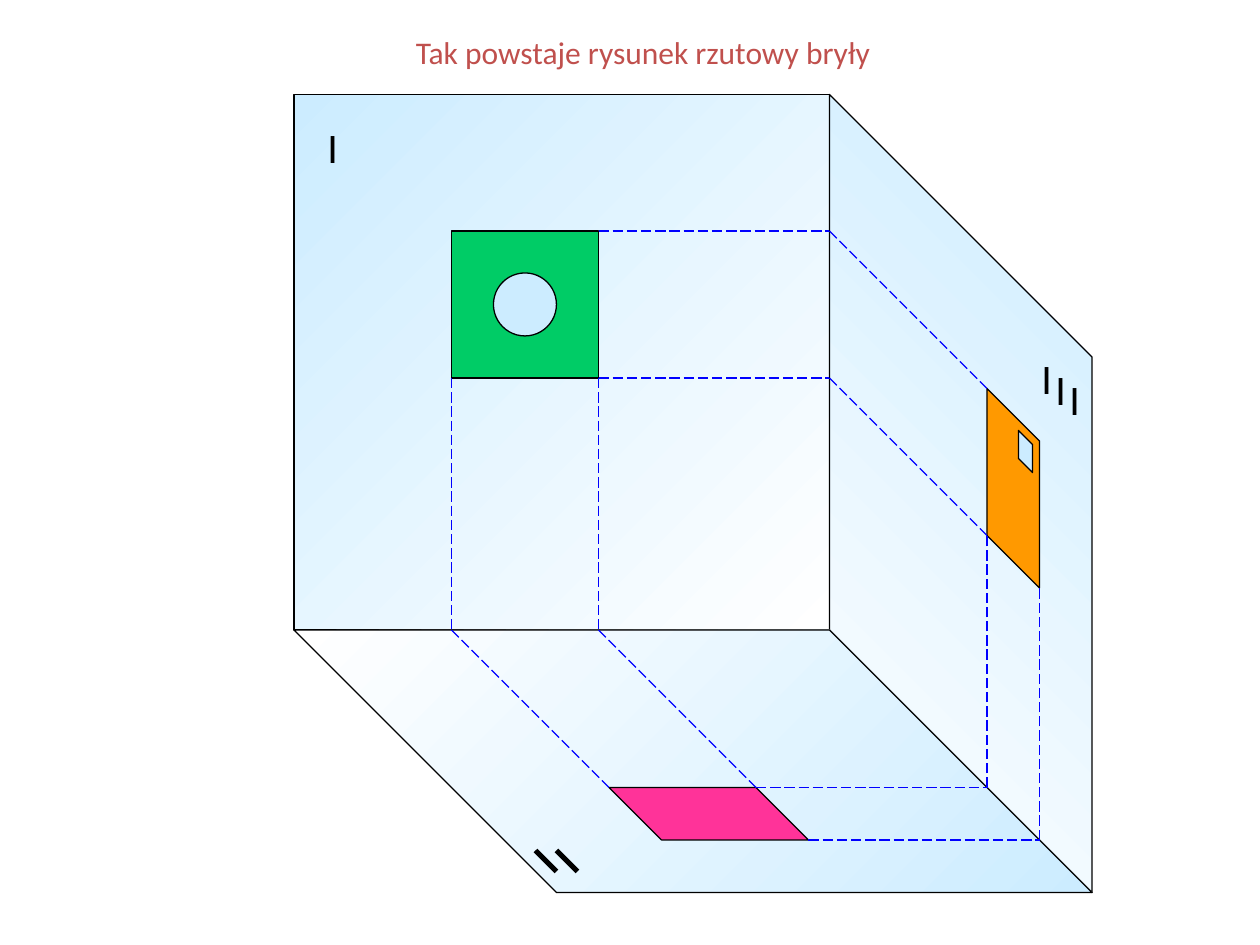
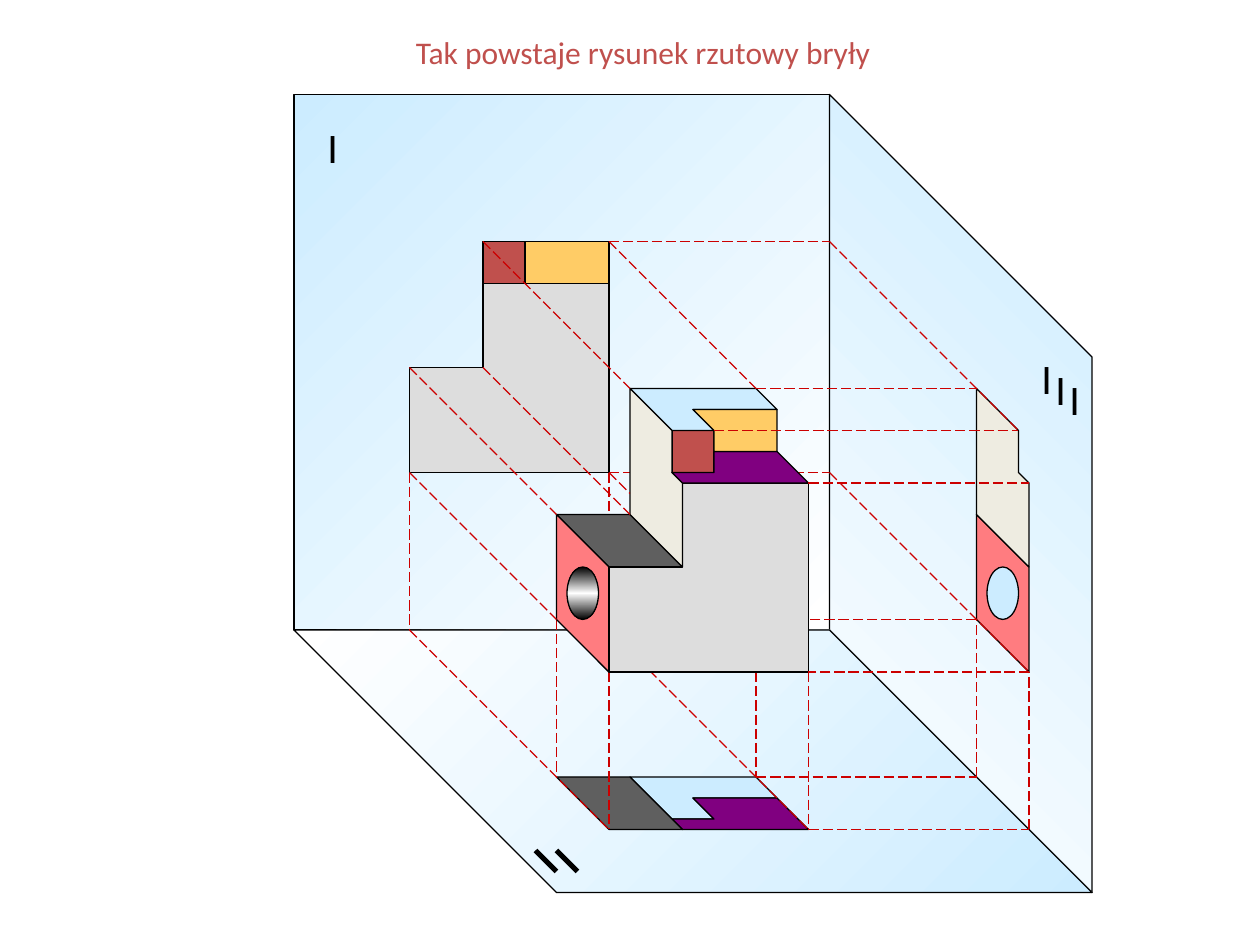
from dataclasses import dataclass

from lxml import etree
from pptx import Presentation
from pptx.dml.color import RGBColor
from pptx.enum.dml import MSO_LINE
from pptx.enum.shapes import MSO_CONNECTOR, MSO_SHAPE
from pptx.enum.text import MSO_ANCHOR, MSO_AUTO_SIZE, PP_ALIGN
from pptx.oxml.ns import qn
from pptx.util import Inches, Pt

RECT, OVAL = MSO_SHAPE.RECTANGLE, MSO_SHAPE.OVAL
STRAIGHT, DASH = MSO_CONNECTOR.STRAIGHT, MSO_LINE.LONG_DASH
MIDDLE, LEFT, NO_FIT = MSO_ANCHOR.MIDDLE, PP_ALIGN.LEFT, MSO_AUTO_SIZE.NONE

TITLE = "Tak powstaje rysunek rzutowy bryły"
TITLE_ONLY = 5


@dataclass(frozen=True)
class Theme:
    font: str = "Calibri"
    title_size: int = 18
    label_size: int = 24
    thin: float = 0.75
    thick: float = 3
    black: str = "000000"
    white: str = "FFFFFF"
    sky: str = "CCECFF"
    brick: str = "C0504D"
    green: str = "00CC66"
    pink: str = "FF3399"
    orange: str = "FF9900"
    blue: str = "0000FF"
    red: str = "CC0000"
    gray: str = "DDDDDD"
    dark: str = "5F5F5F"
    sand: str = "FFCC66"
    purple: str = "800080"
    rose: str = "FF7C80"
    cream: str = "EEECE1"


T = Theme()

# Faces of the stepped solid, on the drawing grid
FRONT = [(77, 46), (65, 46), (65, 54), (58, 54), (58, 64), (77, 64)]
TOP = [(60, 37), (72, 37), (74, 39), (66, 39), (68, 41), (64, 41)]
STEP = [(53, 49), (60, 49), (65, 54), (58, 54)]
LOW_SIDE = [(53, 49), (58, 54), (58, 64), (53, 59)]
HIGH_SIDE = [(60, 37), (64, 41), (64, 45), (65, 46), (65, 54), (60, 49)]
LEDGE = [(74, 43), (68, 43), (68, 45), (64, 45), (65, 46), (77, 46)]
LEDGE_PLAN = [(66, 76), (74, 76), (77, 79), (65, 79), (64, 78), (68, 78)]
NOTCH = [(74, 39), (74, 43), (68, 43), (68, 41), (66, 39)]


def grid(n):
    """The drawing lies on a grid of twelfths of an inch."""
    return Inches(n / 12)


def apply(target, values):
    for name, value in values.items():
        setattr(target, name, value)


class Drawing:
    def __init__(self, prs, theme):
        self.prs, self.t, self.s = prs, theme, None

    def new_slide(self, title):
        self.s = self.prs.slides.add_slide(self.prs.slide_layouts[TITLE_ONLY])
        sp = self.s.shapes.title
        apply(sp, {"left": Inches(3.2), "top": Inches(0.23),
                   "width": Inches(4.01), "height": Inches(0.37)})
        self.set_text(sp.text_frame, title, self.t.title_size, self.t.brick)
        apply(sp.text_frame, {"vertical_anchor": MIDDLE})

    def set_text(self, tf, text, size, color):
        apply(tf, {"word_wrap": True, "auto_size": NO_FIT})
        p = tf.paragraphs[0]
        p.alignment = LEFT
        r = p.add_run()
        r.text = text
        apply(r.font, {"name": self.t.font, "size": Pt(size), "bold": False})
        r.font.color.rgb = RGBColor.from_string(color)

    def label(self, x, y, text="I"):
        tb = self.s.shapes.add_textbox(grid(x), grid(y), grid(3), grid(6))
        self.set_text(tb.text_frame, text, self.t.label_size, self.t.black)

    def paint(self, sp, fill):
        """Fill is one colour, or an angle followed by gradient colours."""
        sp.shadow.inherit = False
        if isinstance(fill, str):
            sp.fill.solid()
            sp.fill.fore_color.rgb = RGBColor.from_string(fill)
        else:
            angle, *colors = fill
            sp.fill.gradient()
            sp.fill.gradient_angle = angle
            stops = next(sp._element.spPr.iter(qn("a:gsLst")))
            for gs in list(stops):
                stops.remove(gs)
            for i, color in enumerate(colors):
                pos = 100000 * i // (len(colors) - 1)
                gs = etree.SubElement(stops, qn("a:gs"), pos=str(pos))
                etree.SubElement(gs, qn("a:srgbClr"), val=color)
        self.stroke(sp.line, self.t.black, self.t.thin)

    def stroke(self, line, color, width):
        line.color.rgb = RGBColor.from_string(color)
        line.width = Pt(width)

    def shape(self, kind, x, y, w, h, fill):
        sp = self.s.shapes.add_shape(kind, grid(x), grid(y), grid(w), grid(h))
        self.paint(sp, fill)

    def face(self, points, fill, dx=0, dy=0):
        pts = [(grid(x + dx), grid(y + dy)) for x, y in points]
        fb = self.s.shapes.build_freeform(*pts[0], scale=1.0)
        fb.add_line_segments(pts[1:], close=True)
        self.paint(fb.convert_to_shape(), fill)

    def line(self, start, end, color, width, dash=None):
        c = self.s.shapes.add_connector(
            STRAIGHT, *(grid(n) for n in (*start, *end)))
        self.stroke(c.line, color, width)
        if dash:
            c.line.dash_style = dash
        etree.SubElement(c._element.spPr, qn("a:effectLst"))

    def trace(self, color, *points):
        """Dashed projection line through several points."""
        for start, end in zip(points, points[1:]):
            self.line(start, end, color, self.t.thin, DASH)

    def planes(self):
        """Three projection planes with their numerals."""
        t = self.t
        self.shape(RECT, 28, 9, 51, 51, (315, t.sky, t.white))
        self.label(30, 11)
        self.face([(104, 85), (104, 34), (79, 9), (79, 60)],
                  (45, t.white, t.sky))
        for i in range(3):
            self.label(98 + i * 4 / 3, 33 + i)
        self.face([(28, 60), (79, 60), (104, 85), (53, 85)],
                  (315, t.white, t.sky))
        for x in (51, 53):
            self.line((x, 81), (x + 2, 83), t.black, t.thick)


def block_slide(d):
    d.new_slide(TITLE)
    d.planes()

    # Three views of the block
    d.face([(58, 75), (72, 75), (77, 80), (63, 80)], T.pink)
    d.face([(94, 37), (99, 42), (99, 56), (94, 51)], T.orange)
    d.shape(RECT, 43, 22, 14, 14, T.green)

    # Projection lines: heights, widths, depths
    for y in (22, 36):
        d.trace(T.blue, (57, y), (79, y), (94, y + 15))
    for x in (43, 57):
        d.trace(T.blue, (x, 36), (x, 60), (x + 15, 75))
    for z in (15, 20):
        d.trace(T.blue, (57 + z, 60 + z), (79 + z, 60 + z), (79 + z, 36 + z))

    # Openings
    d.shape(OVAL, 47, 26, 6, 6, T.sky)
    d.face([(97, 41), (98.33, 42.33), (98.33, 45), (97, 43.67)], T.sky)


def solid_slide(d):
    d.new_slide(TITLE)
    d.planes()

    # Front view
    d.face(FRONT, T.gray, dx=-19, dy=-19)
    d.shape(RECT, 46, 23, 4, 4, T.brick)
    d.shape(RECT, 50, 23, 8, 4, T.sand)

    # Top view
    d.face(TOP, T.sky, dy=37)
    d.face(LEDGE_PLAN, T.purple)
    d.face(STEP, T.dark, dy=25)

    # Side view
    d.face(LOW_SIDE, T.rose, dx=40)
    d.shape(OVAL, 94, 54, 3, 5, T.sky)
    d.face(HIGH_SIDE, T.cream, dx=33)

    # Projection lines behind the solid
    for x, top, bottom in ((58, 64, 79), (53, 59, 74),
                           (77, 64, 79), (72, 64, 74)):
        d.trace(T.red, (x, top), (x, bottom))
    for y, run in ((23, 18), (45, 19)):
        d.trace(T.red, (58, y), (79, y), (79 + run, y + run))
    for x in (39, 58):
        d.trace(T.red, (x, 45), (x, 60), (x + 19, 79))

    # Solid
    d.shape(RECT, 64, 41, 4, 4, T.brick)
    d.face(STEP, T.dark)
    d.face(LOW_SIDE, T.rose)
    d.shape(OVAL, 54, 54, 3, 5, (270, T.black, T.white, T.black))
    for points, fill in ((TOP, T.sky), (FRONT, T.gray), (HIGH_SIDE, T.cream),
                         (LEDGE, T.purple), (NOTCH, T.sand)):
        d.face(points, fill)

    # Projection lines in front of the solid
    d.trace(T.red, (72, 74), (93, 74), (93, 59), (77, 59))
    d.trace(T.red, (77, 79), (98, 79), (98, 64), (77, 64))
    for x, y in ((46, 23), (58, 23), (39, 35), (46, 35), (39, 45)):
        d.trace(T.red, (x, y), (x + 14, y + 14))
    d.trace(T.red, (58, 45), (60, 47))
    for y, x1, x2 in ((46, 77, 98), (37, 72, 93), (41, 68, 97)):
        d.trace(T.red, (x1, y), (x2, y))


def main():
    prs = Presentation()
    apply(prs, {"slide_width": Inches(10), "slide_height": Inches(7.5)})
    d = Drawing(prs, T)
    block_slide(d)
    solid_slide(d)
    prs.save("out.pptx")


if __name__ == "__main__":
    main()
